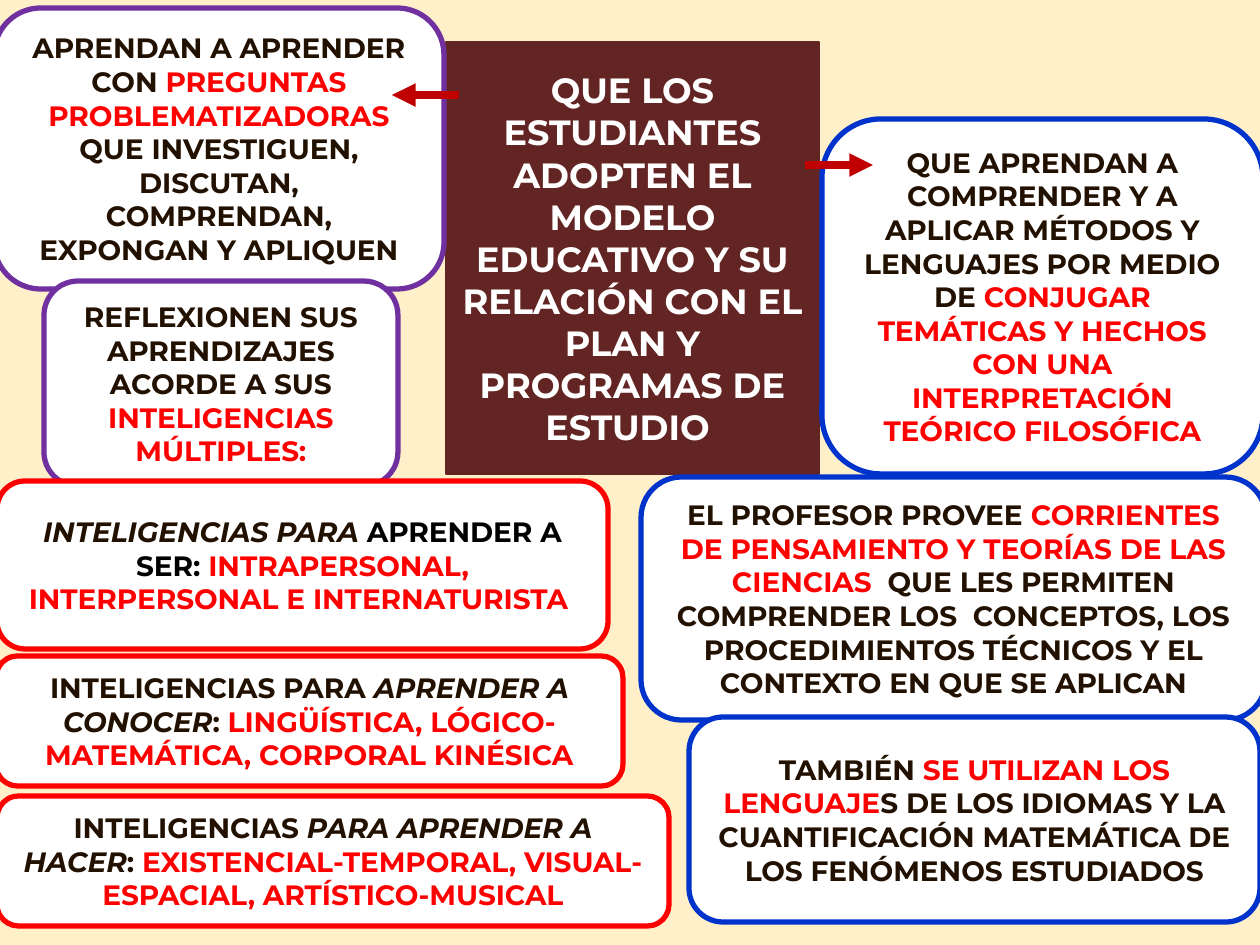
import dataclasses

import pptx
import pptx.dml.color
import pptx.enum.shapes
import pptx.enum.text
import pptx.oxml
import pptx.oxml.ns
import pptx.util

SCALE = 914400 / 126  # EMU in one px
ROUND = pptx.enum.shapes.MSO_SHAPE.ROUNDED_RECTANGLE


@dataclasses.dataclass(frozen=True)
class Theme:
    font: str = "Montserrat"
    back: str = "FFF0C9"
    white: str = "FFFFFF"
    dark: str = "221100"
    black: str = "000000"
    red: str = "FF0000"
    wine: str = "632523"
    purple: str = "7030A0"
    blue: str = "0033CC"
    arrow: str = "C00000"
    head: int = 20
    text: int = 16
    edge: int = 3
    thick: float = 4.5


THEME = Theme()


def px(count):
    return pptx.util.Emu(round(count * SCALE))


def color(code):
    return pptx.dml.color.RGBColor.from_string(code)


def plain(text):
    return text, THEME.dark, False


def lean(text):
    return text, THEME.dark, True


def key(text):
    return text, THEME.red, False


def paint(shape, fill, line, width):
    shape.fill.solid()
    shape.fill.fore_color.rgb = color(fill)
    shape.line.color.rgb = color(line)
    shape.line.width = pptx.util.Pt(width)


def write(shape, paras, size):
    """Fill a shape with centred paragraphs of (text, colour, italic) runs."""
    frame = shape.text_frame
    frame.word_wrap = True
    frame.auto_size = pptx.enum.text.MSO_AUTO_SIZE.SHAPE_TO_FIT_TEXT
    frame.vertical_anchor = pptx.enum.text.MSO_ANCHOR.MIDDLE
    frame.margin_left = frame.margin_right = px(16)
    frame.margin_top = frame.margin_bottom = px(8)
    for i, runs in enumerate(paras):
        para = frame.add_paragraph() if i else frame.paragraphs[0]
        para.alignment = pptx.enum.text.PP_ALIGN.CENTER
        for text, tint, italic in runs:
            run = para.add_run()
            run.text = text
            font = run.font
            font.name, font.size = THEME.font, pptx.util.Pt(size)
            font.bold, font.italic = True, italic
            font.color.rgb = color(tint)


def title(slide, area, text):
    """Turn the title placeholder into a filled round box."""
    shape = slide.shapes.title
    shape.left, shape.top, shape.width, shape.height = map(px, area)
    shape.element.spPr.append(pptx.oxml.parse_xml(
        f'<a:prstGeom {pptx.oxml.ns.nsdecls("a")} prst="roundRect"><a:avLst/></a:prstGeom>'))
    paint(shape, THEME.wine, THEME.wine, 1)
    write(shape, [[(text, THEME.white, False)]], THEME.head)


def box(slide, area, line, *paras):
    shape = slide.shapes.add_shape(ROUND, *map(px, area))
    shape.shadow.inherit = False
    paint(shape, THEME.white, line, THEME.edge)
    write(shape, paras, THEME.text)


def arrow(slide, start, end, top):
    kind = pptx.enum.shapes.MSO_CONNECTOR.STRAIGHT
    line = slide.shapes.add_connector(kind, px(start), px(top), px(end), px(top))
    line.line.color.rgb = color(THEME.arrow)
    line.line.width = pptx.util.Pt(THEME.thick)
    names = pptx.oxml.ns.nsdecls("a")
    line.line._get_or_add_ln().append(
        pptx.oxml.parse_xml(f'<a:tailEnd {names} type="triangle"/>'))
    line.element.spPr.append(pptx.oxml.parse_xml(f"<a:effectLst {names}/>"))


def main():
    deck = pptx.Presentation()
    deck.slide_width, deck.slide_height = px(1260), px(945)
    slide = deck.slides.add_slide(deck.slide_layouts[5])
    slide.background.fill.solid()
    slide.background.fill.fore_color.rgb = color(THEME.back)

    title(slide, (446, 42, 373, 432),
          "QUE LOS ESTUDIANTES ADOPTEN EL MODELO EDUCATIVO Y SU RELACIÓN "
          "CON EL PLAN Y PROGRAMAS DE ESTUDIO ")
    box(slide, (-6, 8, 450, 281), THEME.purple,
        [plain("APRENDAN A APRENDER")],
        [plain("CON "), key("PREGUNTAS PROBLEMATIZADORAS "),
         plain("QUE INVESTIGUEN, DISCUTAN, COMPRENDAN, EXPONGAN Y APLIQUEN")])
    box(slide, (822, 119, 441, 355), THEME.blue,
        [plain("QUE APRENDAN A COMPRENDER Y A APLICAR MÉTODOS Y LENGUAJES "
               "POR MEDIO DE "), key("CONJUGAR TEMÁTICAS Y HECHOS")],
        [key("CON UNA INTERPRETACIÓN TEÓRICO FILOSÓFICA")])
    box(slide, (44, 281, 354, 205), THEME.purple,
        [plain("REFLEXIONEN SUS APRENDIZAJES ACORDE A SUS "),
         key("INTELIGENCIAS MÚLTIPLES:")])
    arrow(slide, 805, 873, 165)
    arrow(slide, 459, 392, 95)
    box(slide, (-3, 481, 611, 168), THEME.red,
        [lean("INTELIGENCIAS PARA "), ("APRENDER A SER: ", THEME.black, False),
         key("INTRAPERSONAL, INTERPERSONAL E INTERNATURISTA ")])
    box(slide, (641, 477, 625, 243), THEME.blue,
        [plain("EL PROFESOR PROVEE "),
         key("CORRIENTES DE PENSAMIENTO Y TEORÍAS DE LAS CIENCIAS"),
         plain("  QUE LES PERMITEN COMPRENDER LOS  CONCEPTOS, LOS "
               "PROCEDIMIENTOS TÉCNICOS Y EL CONTEXTO EN QUE SE APLICAN")])
    box(slide, (689, 717, 571, 205), THEME.blue,
        [plain("TAMBIÉN "), key("SE UTILIZAN LOS LENGUAJE"),
         plain("S DE LOS IDIOMAS Y LA CUANTIFICACIÓN MATEMÁTICA "
               "DE LOS FENÓMENOS ESTUDIADOS")])
    box(slide, (-4, 656, 627, 130), THEME.red,
        [plain("INTELIGENCIAS PARA "), lean("APRENDER A CONOCER"), plain(": "),
         key("LINGÜÍSTICA, LÓGICO-MATEMÁTICA, CORPORAL KINÉSICA")])
    box(slide, (-3, 796, 672, 130), THEME.red,
        [plain("INTELIGENCIAS "), lean("PARA APRENDER A HACER"), plain(": "),
         key("EXISTENCIAL-TEMPORAL, VISUAL-ESPACIAL, ARTÍSTICO-MUSICAL")])
    deck.save("out.pptx")


if __name__ == "__main__":
    main()
